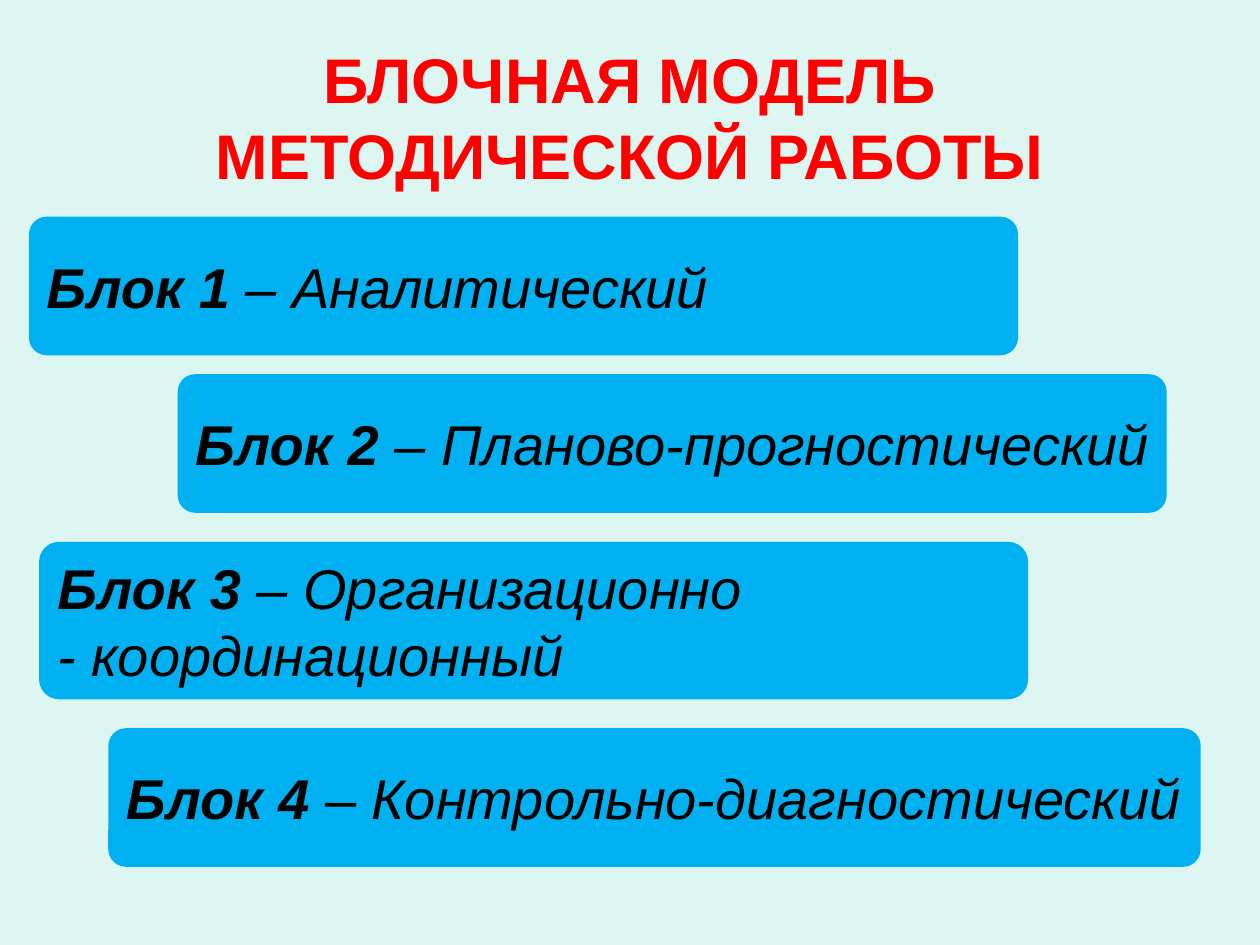
import pptx
import pptx.util
import pptx.dml.color
import pptx.enum.shapes
import pptx.enum.text

WIDE, HIGH = 10, 7.5
COLS, ROWS = 100, 75
FONT = "Arial"
BACK, RED, BLUE, BLACK = "DEF6F1", "FF0000", "00B0F0", "000000"

# left, top, width, height in grid cells; label; lines of text
BLOCKS = [
    (2.3, 17.2, 78.5, 11, "Блок 1", [" – Аналитический"]),
    (14.1, 29.7, 78.5, 11, "Блок 2", [" – Планово-прогностический"]),
    (3.1, 43, 78.5, 12.5, "Блок 3", [" – Организационно", "- координационный"]),
    (8.6, 57.8, 86.7, 11, "Блок 4", [" – Контрольно-диагностический"]),
]


def paint(color, code):
    color.rgb = pptx.dml.color.RGBColor.from_string(code)


def place(left, top, width, height):
    """Turn grid cells into slide lengths."""
    col, row = WIDE / COLS, HIGH / ROWS
    cells = (left * col, top * row, width * col, height * row)
    return [pptx.util.Inches(size) for size in cells]


def style(run, size, code, bold=False, slant=False):
    font = run.font
    font.name, font.size = FONT, pptx.util.Pt(size)
    font.bold, font.italic = bold, slant
    paint(font.color, code)


def add_title(slide, text):
    frame = slide.shapes.add_textbox(*place(5, 3, 90, 12.5)).text_frame
    frame.word_wrap = True
    frame.vertical_anchor = pptx.enum.text.MSO_ANCHOR.MIDDLE
    frame.text = text
    para = frame.paragraphs[0]
    para.alignment = pptx.enum.text.PP_ALIGN.CENTER
    style(para.runs[0], 36, RED, bold=True)


def add_block(slide, left, top, width, height, label, lines):
    """Draw a rounded bar with a bold label before its first line."""
    kind = pptx.enum.shapes.MSO_SHAPE.ROUNDED_RECTANGLE
    bar = slide.shapes.add_shape(kind, *place(left, top, width, height))
    bar.adjustments[0] = 0.127
    bar.shadow.inherit = False
    bar.fill.solid()
    paint(bar.fill.fore_color, BLUE)
    bar.line.fill.background()

    frame = bar.text_frame
    frame.word_wrap = False
    frame.vertical_anchor = pptx.enum.text.MSO_ANCHOR.MIDDLE
    frame.text = "\n".join([label] + lines[1:])
    frame.paragraphs[0].add_run().text = lines[0]
    for para in frame.paragraphs:
        para.alignment = pptx.enum.text.PP_ALIGN.LEFT
        for run in para.runs:
            style(run, 32, BLACK, bold=run.text == label, slant=True)


def main():
    deck = pptx.Presentation()
    deck.slide_width = pptx.util.Inches(WIDE)
    deck.slide_height = pptx.util.Inches(HIGH)
    slide = deck.slides.add_slide(deck.slide_layouts[6])
    fill = slide.background.fill
    fill.solid()
    paint(fill.fore_color, BACK)
    add_title(slide, "БЛОЧНАЯ МОДЕЛЬ МЕТОДИЧЕСКОЙ РАБОТЫ")
    for block in BLOCKS:
        add_block(slide, *block)
    deck.save("out.pptx")


if __name__ == "__main__":
    main()
